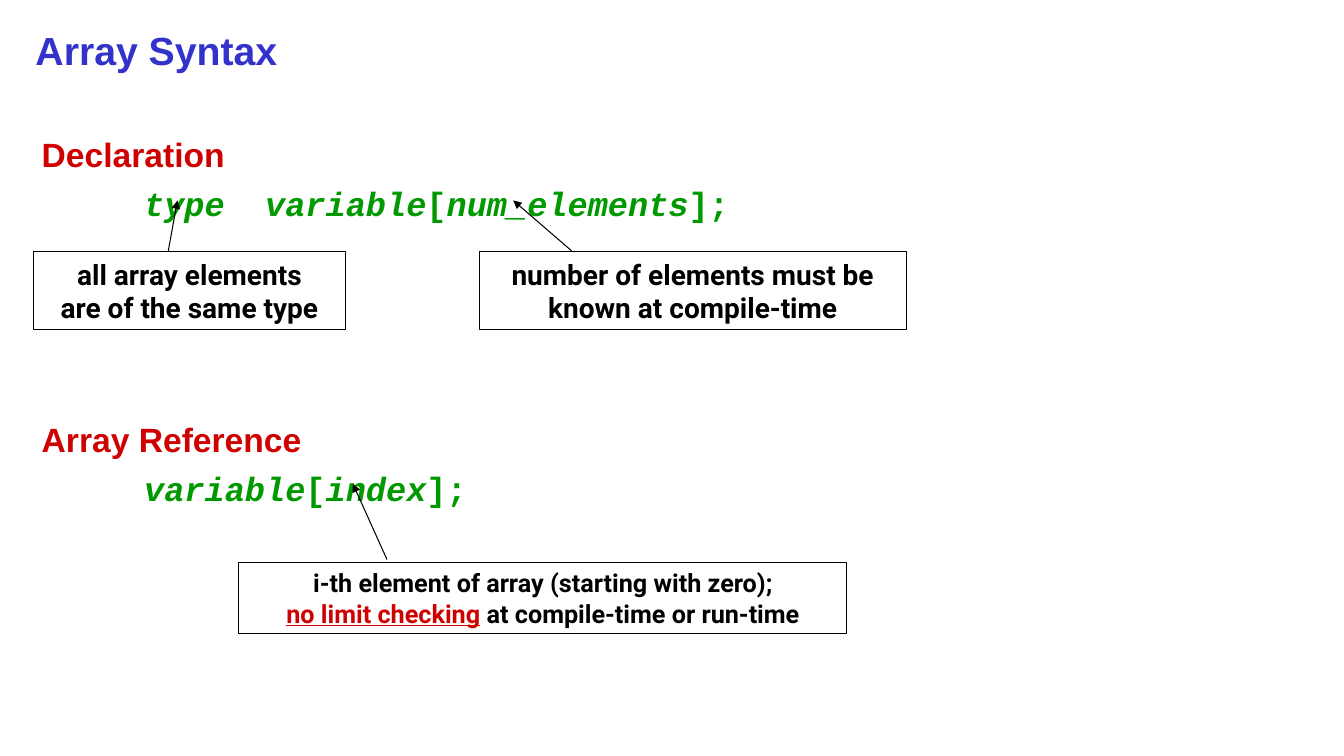
from lxml.etree import SubElement
from pptx import Presentation
from pptx.dml.color import RGBColor
from pptx.enum.shapes import MSO_CONNECTOR, MSO_SHAPE
from pptx.enum.text import MSO_ANCHOR, MSO_AUTO_SIZE, PP_ALIGN
from pptx.oxml.ns import qn
from pptx.util import Cm, Pt

COLORS = {"title": "3333CC", "head": "CE0000", "code": "009900", "ink": "000000"}


def write(para, text, size=24, font="Arial", color="ink", italic=False, under=False):
    """Add a bold run of text to a paragraph."""
    run = para.add_run()
    run.text = text
    face = run.font
    face.name, face.size, face.bold = font, Pt(size), True
    face.italic, face.underline = italic, under
    face.color.rgb = RGBColor.from_string(COLORS[color])


def place(shape, left, top, width, height):
    """Move and size a shape in centimetres."""
    shape.left, shape.top = Cm(left), Cm(top)
    shape.width, shape.height = Cm(width), Cm(height)


def new_para(frame):
    """Return the unused first paragraph or a new one."""
    first = frame.paragraphs[0]
    return frame.add_paragraph() if first.runs else first


def add_line(frame, parts, gap, indent=0, **style):
    """Add a plain body line whose parts alternate slanted and upright."""
    para = new_para(frame)
    para.space_before = Pt(gap)
    props = para._p.get_or_add_pPr()
    props.set("marL", str(Cm(indent)))
    props.set("indent", "0")
    SubElement(props, qn("a:buNone"))
    for i, text in enumerate(parts):
        write(para, text, italic=bool(indent) and i % 2 == 0, **style)


def add_note(slide, spot, size, lines):
    """Add a framed note; each line is a list of text and format pairs."""
    box = slide.shapes.add_shape(MSO_SHAPE.RECTANGLE, *map(Cm, spot))
    box.shadow.inherit = False
    box.fill.background()
    box.line.color.rgb = RGBColor.from_string(COLORS["ink"])
    box.line.width = Pt(0.75)
    frame = box.text_frame
    frame.word_wrap = False
    frame.vertical_anchor = MSO_ANCHOR.MIDDLE
    for line in lines:
        para = new_para(frame)
        para.alignment = PP_ALIGN.CENTER
        for text, style in line:
            write(para, text, size=size, font="Roboto", **style)


def add_arrow(slide, start, end):
    """Draw a thin arrow from start to end."""
    link = slide.shapes.add_connector(MSO_CONNECTOR.STRAIGHT, *map(Cm, start + end))
    link.line.color.rgb = RGBColor.from_string(COLORS["ink"])
    link.line.width = Pt(0.75)
    props = link.element.spPr
    SubElement(props.find(qn("a:ln")), qn("a:tailEnd"), type="triangle")
    SubElement(props, qn("a:effectLst"))


def fill_title(slide, text):
    """Format and fill the title placeholder."""
    title = slide.shapes.title
    place(title, 0.64, 0.53, 32.18, 1.47)
    frame = title.text_frame
    frame.auto_size = MSO_AUTO_SIZE.NONE
    frame.vertical_anchor = MSO_ANCHOR.MIDDLE
    para = new_para(frame)
    para.alignment = PP_ALIGN.LEFT
    write(para, text, size=28, color="title")


def fill_body(slide, topics):
    """Fill the body placeholder with headings and code."""
    body = slide.placeholders[1]
    place(body, 0.64, 2.54, 32.18, 13.77)
    frame = body.text_frame
    frame.auto_size = MSO_AUTO_SIZE.NONE
    frame.margin_left, frame.margin_top = Cm(0.41), Cm(0.83)
    for head, gap, code in topics:
        add_line(frame, [head], gap, color="head")
        add_line(frame, code, 6, indent=2.58, font="Courier New", color="code")


def main():
    """Build the slide and save it."""
    deck = Presentation()
    deck.slide_width, deck.slide_height = Cm(33.86), Cm(19.05)
    slide = deck.slides.add_slide(deck.slide_layouts[1])
    fill_title(slide, "Array Syntax")
    fill_body(slide, [
        ("Declaration", 0, ["type  variable", "[", "num_elements", "];"]),
        ("Array Reference", 140, ["variable", "[", "index", "];"]),
    ])
    add_note(slide, (0.84, 6.35, 7.87, 1.96), 20, [
        [("all array elements", {})],
        [("are of the same type", {})],
    ])
    add_note(slide, (12.07, 6.35, 10.77, 1.96), 20, [
        [("number of elements must be", {})],
        [("known at compile-time", {})],
    ])
    add_note(slide, (6.02, 14.17, 15.32, 1.8), 18, [
        [("i-th element of array (starting with zero);", {})],
        [("no limit checking", {"color": "head", "under": True}),
         (" at compile-time or run-time", {})],
    ])
    add_arrow(slide, (4.24, 6.32), (4.47, 5.05))
    add_arrow(slide, (14.4, 6.32), (12.93, 5.05))
    add_arrow(slide, (9.75, 14.1), (8.89, 12.19))
    deck.save("out.pptx")


if __name__ == "__main__":
    main()
